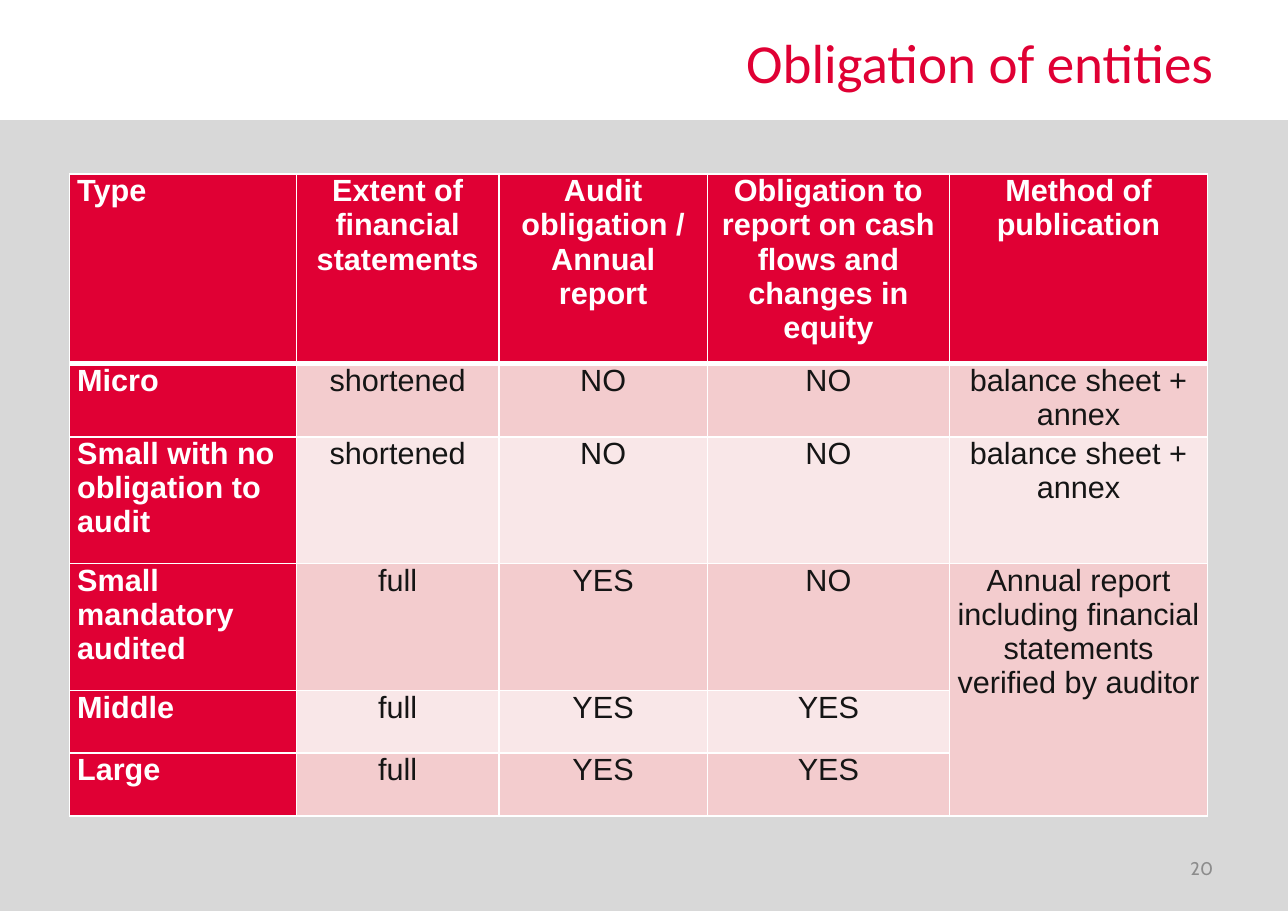
from lxml import etree
from pptx import Presentation
from pptx.dml.color import RGBColor
from pptx.enum.shapes import MSO_SHAPE
from pptx.enum.text import MSO_ANCHOR, PP_ALIGN
from pptx.oxml.ns import qn
from pptx.util import Inches, Pt

RECT = MSO_SHAPE.RECTANGLE
MIDDLE = MSO_ANCHOR.MIDDLE
LEFT, CENTER, RIGHT, JUSTIFY = (
    PP_ALIGN.LEFT, PP_ALIGN.CENTER, PP_ALIGN.RIGHT, PP_ALIGN.JUSTIFY)

RED, WHITE, INK = "E00034", "FFFFFF", "151515"
PANEL, GREY = "D8D8D8", "8C8C8C"
BANDS = ("F9E7E8", "F3CCCE")

COLS = (2.06, 1.84, 1.89, 2.2, 2.34)
ROWS = (1.72, 0.57, 1.15, 1.15, 0.57, 0.57)
VERIFIED = "Annual report including financial statements verified by auditor"
ENTITIES = (
    ("Type", "Extent of financial statements", "Audit obligation / Annual report",
     "Obligation to report on cash flows and changes in equity",
     "Method of publication"),
    ("Micro", "shortened", "NO", "NO", "balance sheet + annex"),
    ("Small with no obligation to audit", "shortened", "NO", "NO",
     "balance sheet + annex"),
    ("Small mandatory audited", "full", "YES", "NO", VERIFIED),
    ("Middle", "full", "YES", "YES", ""),
    ("Large", "full", "YES", "YES", ""),
)


def rgb(color):
    return RGBColor.from_string(color)


def write(tf, text, size=20, font="Arial", color=INK, bold=False, align=LEFT):
    tf.word_wrap = True
    p = tf.paragraphs[0]
    p.alignment = align
    r = p.add_run()
    r.text = text
    r.font.size = Pt(size)
    r.font.name = font
    r.font.bold = bold
    r.font.color.rgb = rgb(color)


def set_borders(cell, color, **widths):
    """Draw cell edges; widths in points are keyed L, R, T, B in that order."""
    tc_pr = cell._tc.get_or_add_tcPr()
    for i, (side, width) in enumerate(widths.items()):
        ln = etree.Element(qn(f"a:ln{side}"), w=str(Pt(width)))
        fill = etree.SubElement(ln, qn("a:solidFill"))
        etree.SubElement(fill, qn("a:srgbClr"), val=color)
        tc_pr.insert(i, ln)


class Deck:
    def __init__(self, width, height):
        self.prs = Presentation()
        self.prs.slide_width = Inches(width)
        self.prs.slide_height = Inches(height)
        self.s = self.prs.slides.add_slide(self.prs.slide_layouts[6])

    def panel(self, x, y, w, h, color):
        sp = self.s.shapes.add_shape(RECT, Inches(x), Inches(y), Inches(w), Inches(h))
        sp.shadow.inherit = False
        sp.fill.solid()
        sp.fill.fore_color.rgb = rgb(color)
        sp.line.fill.background()

    def text(self, x, y, w, h, text, **style):
        sp = self.s.shapes.add_textbox(Inches(x), Inches(y), Inches(w), Inches(h))
        sp.text_frame.vertical_anchor = MIDDLE
        write(sp.text_frame, text, **style)

    def table(self, x, y, cols, rows, values):
        table = self.s.shapes.add_table(
            len(rows), len(cols), Inches(x), Inches(y),
            Inches(sum(cols)), Inches(sum(rows))).table
        table.first_row = table.horz_banding = False
        for col, width in zip(table.columns, cols):
            col.width = Inches(width)
        for row, height in zip(table.rows, rows):
            row.height = Inches(height)
        for i, row in enumerate(values):
            for j, value in enumerate(row):
                self.cell(table.cell(i, j), value, i, j)
        return table

    def cell(self, cell, value, i, j):
        head = i == 0 or j == 0
        cell.margin_left = cell.margin_right = Inches(0.07)
        cell.margin_top = cell.margin_bottom = 0
        cell.fill.solid()
        cell.fill.fore_color.rgb = rgb(RED if head else BANDS[i % 2])
        set_borders(cell, WHITE, L=1, R=1, T=3 if i == 1 else 1, B=3 if i == 0 else 1)
        if j:
            align = CENTER
        else:
            align = LEFT if " " in value else JUSTIFY
        write(cell.text_frame, value, color=WHITE if head else INK,
              bold=head, align=align)


def main():
    deck = Deck(11.69, 8.27)
    deck.panel(0, 1.09, 11.69, 7.18, PANEL)
    deck.text(2.99, 0.2, 8.12, 0.72, "Obligation of entities",
              size=36, font="Calibri", color=RED, align=RIGHT)
    deck.text(8.38, 7.66, 2.73, 0.44, "20",
              size=12, font="Cabin", color=GREY, align=RIGHT)
    table = deck.table(0.63, 1.58, COLS, ROWS, ENTITIES)
    table.cell(3, 4).merge(table.cell(5, 4))
    deck.prs.save("out.pptx")


if __name__ == "__main__":
    main()
